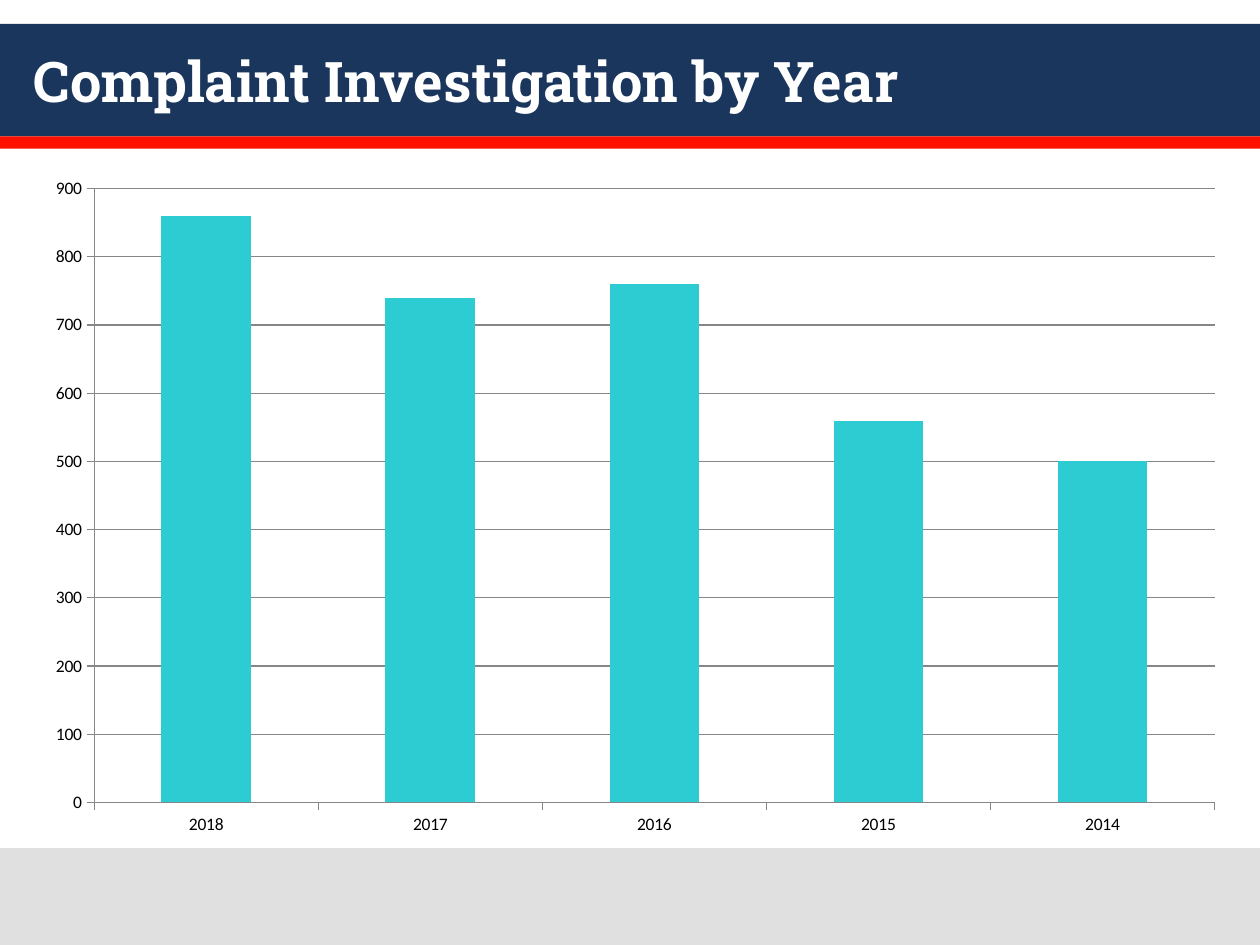
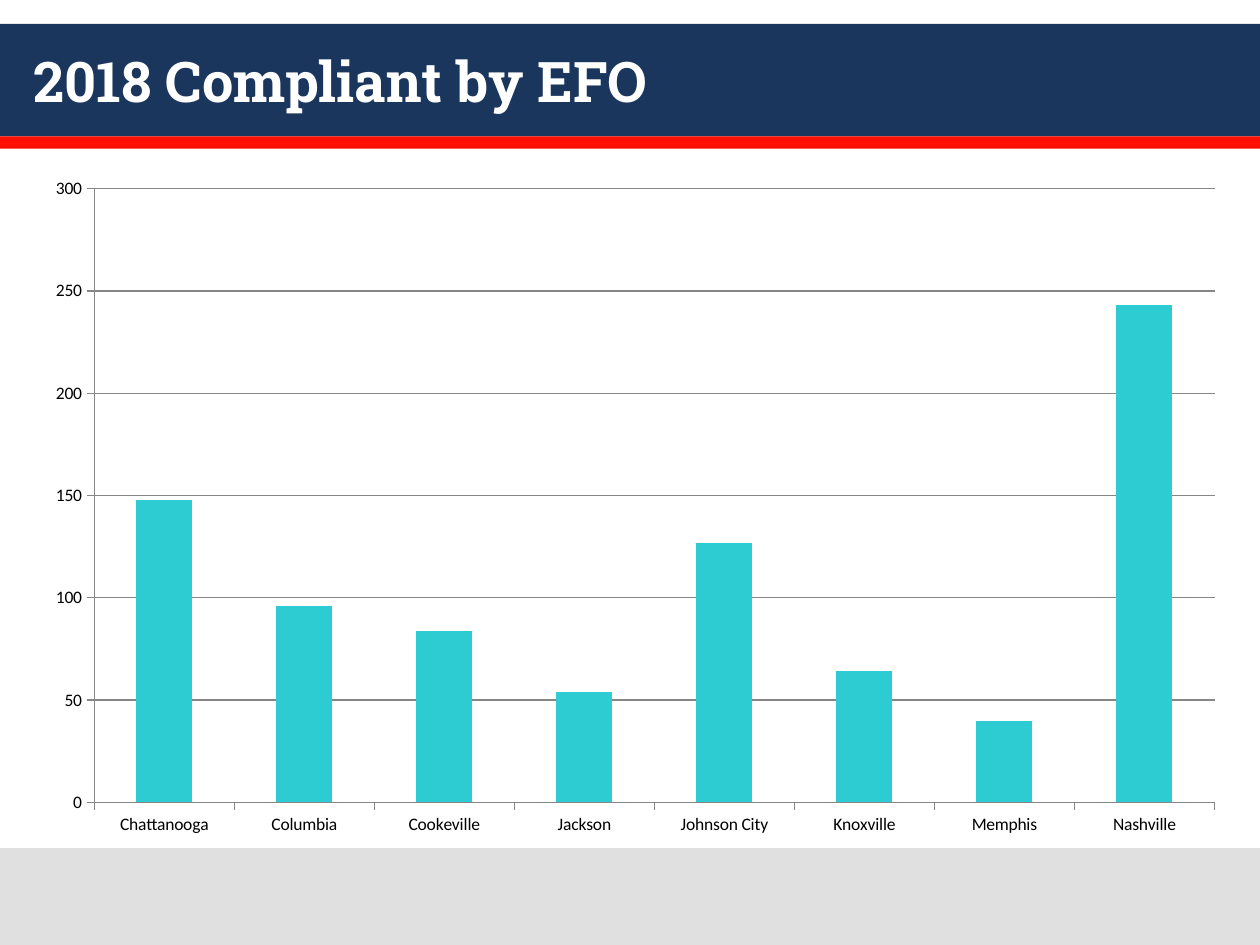
from dataclasses import dataclass

from pptx import Presentation
from pptx.chart.data import CategoryChartData
from pptx.dml.color import RGBColor
from pptx.enum import chart as ch, shapes, text
from pptx.util import Cm, Pt


@dataclass(frozen=True)
class Theme:
    navy: RGBColor = RGBColor(0x1B, 0x36, 0x5D)
    red: RGBColor = RGBColor(0xFF, 0x0F, 0x00)
    grey: RGBColor = RGBColor(0xE0, 0xE0, 0xE0)
    teal: RGBColor = RGBColor(0x2D, 0xCC, 0xD3)
    axis: RGBColor = RGBColor(0x86, 0x86, 0x86)
    white: RGBColor = RGBColor(0xFF, 0xFF, 0xFF)
    black: RGBColor = RGBColor(0x00, 0x00, 0x00)
    title_font: str = "Roboto Slab"
    chart_font: str = "Calibri"
    title_size: Pt = Pt(32)
    chart_size: Pt = Pt(10)


THEME = Theme()
WIDTH, HEIGHT = Cm(25.4), Cm(19.05)
TITLE_BOX = Cm(0.43), Cm(0.48), Cm(24.56), Cm(2.28)
CHART_BOX = Cm(0.64), Cm(3.33), Cm(24.33), Cm(13.77)
BANDS = [  # top, height, colour
    (Cm(0.48), Cm(2.27), THEME.navy),
    (Cm(2.75), Cm(0.25), THEME.red),
    (Cm(17.1), Cm(1.95), THEME.grey),
]
CHARTS = [  # title, axis maximum, axis step, values
    ("Complaint Investigation by Year", 900, 100,
     {"2018": 860, "2017": 740, "2016": 760, "2015": 560, "2014": 500}),
    ("2018 Compliant by EFO", 300, 50,
     {"Chattanooga": 148, "Columbia": 96, "Cookeville": 84, "Jackson": 54,
      "Johnson City": 127, "Knoxville": 64, "Memphis": 40, "Nashville": 243}),
]


def move_bands_to_master(prs, slide):
    """Draw the bands on a slide, then move them behind everything on the master."""
    tree = prs.slide_master.shapes._spTree
    for i, (top, height, colour) in enumerate(BANDS):
        sp = slide.shapes.add_shape(shapes.MSO_SHAPE.RECTANGLE, 0, top, WIDTH, height)
        sp.shadow.inherit = False
        sp.fill.solid()
        sp.fill.fore_color.rgb = colour
        sp.line.fill.background()
        sp._element.nvSpPr.cNvPr.set("id", str(100 + i))
        tree.insert(2 + i, sp._element)


def set_title(slide, box, words):
    title = slide.shapes.title
    title.left, title.top, title.width, title.height = box
    tf = title.text_frame
    tf.text = words
    tf.vertical_anchor = text.MSO_ANCHOR.MIDDLE
    p = tf.paragraphs[0]
    p.alignment = text.PP_ALIGN.LEFT
    font = p.runs[0].font
    font.name, font.size, font.bold = THEME.title_font, THEME.title_size, True
    font.color.rgb = THEME.white


def add_column_chart(slide, box, values, maximum, step):
    data = CategoryChartData()
    data.categories = list(values)
    data.add_series("Series 1", list(values.values()))
    chart = slide.shapes.add_chart(ch.XL_CHART_TYPE.COLUMN_CLUSTERED, *box, data).chart
    chart.has_legend = chart.has_title = False
    chart.font.name, chart.font.size = THEME.chart_font, THEME.chart_size
    chart.font.color.rgb = THEME.black

    plot = chart.plots[0]
    plot.gap_width, plot.vary_by_categories = 150, False
    fill = plot.series[0].format.fill
    fill.solid()
    fill.fore_color.rgb = THEME.teal

    value_axis = chart.value_axis
    value_axis.minimum_scale, value_axis.maximum_scale = 0, maximum
    value_axis.major_unit = step
    value_axis.has_major_gridlines = True
    chart.category_axis.has_major_gridlines = False
    for axis in (value_axis, chart.category_axis):
        axis.major_tick_mark = ch.XL_TICK_MARK.OUTSIDE
        axis.minor_tick_mark = ch.XL_TICK_MARK.NONE
    for part in (value_axis, chart.category_axis, value_axis.major_gridlines):
        part.format.line.color.rgb = THEME.axis
        part.format.line.width = Pt(0.75)


def add_chart_slide(prs, title, maximum, step, values):
    slide = prs.slides.add_slide(prs.slide_layouts.get_by_name("Title Only"))
    set_title(slide, TITLE_BOX, title)
    add_column_chart(slide, CHART_BOX, values, maximum, step)


def main():
    prs = Presentation()
    prs.slide_width, prs.slide_height = WIDTH, HEIGHT
    for chart in CHARTS:
        add_chart_slide(prs, *chart)
    move_bands_to_master(prs, prs.slides[0])
    prs.save("out.pptx")


if __name__ == "__main__":
    main()
